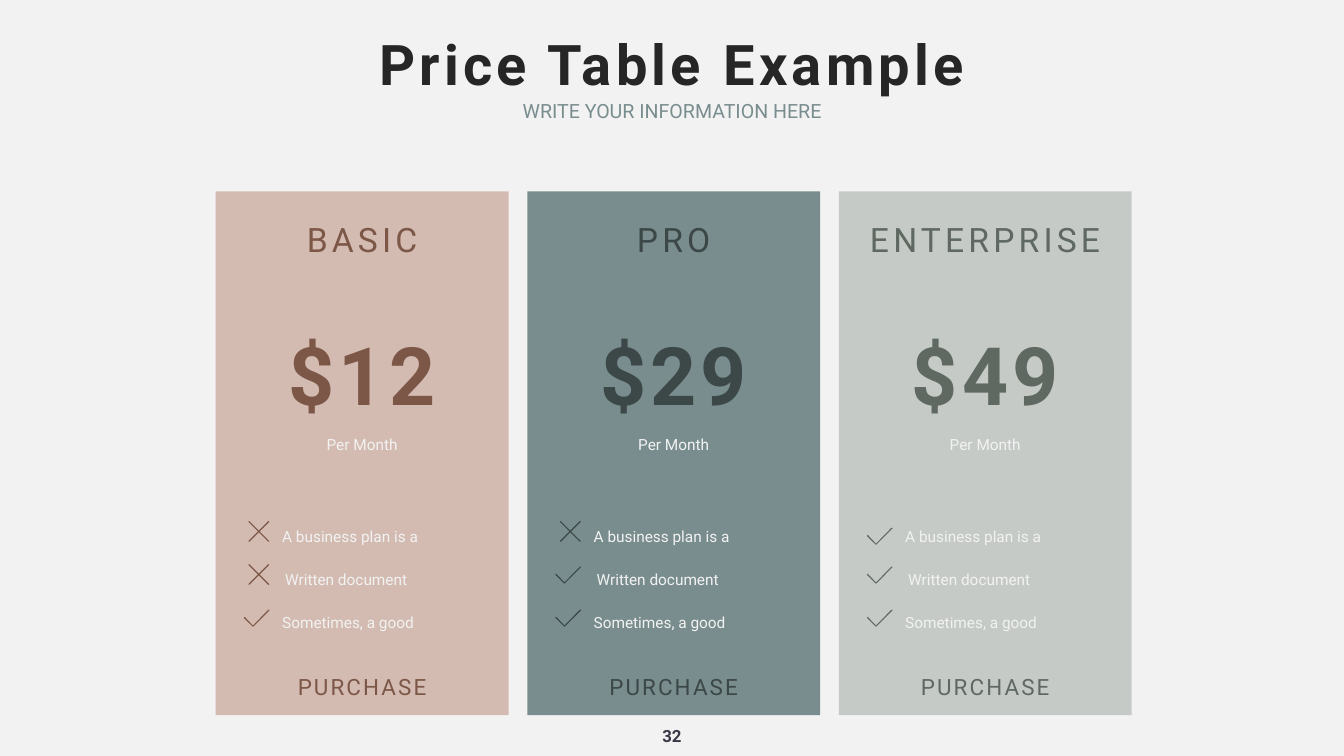
"""Build a price table slide with three plan cards."""
from dataclasses import dataclass

from pptx import Presentation
from pptx import util as u
from pptx.dml.color import RGBColor
from pptx.enum import shapes, text
from pptx.oxml.ns import qn

FONT = "Roboto"
PAPER = RGBColor(0xF2, 0xF2, 0xF2)
INK = RGBColor(0x26, 0x26, 0x26)
NAVY = RGBColor(0x3A, 0x38, 0x46)
TEAL = RGBColor(0x79, 0x8D, 0x8E)
BLUSH = RGBColor(0xD3, 0xBB, 0xB1)
SAGE = RGBColor(0xC5, 0xCA, 0xC6)
BROWN = RGBColor(0x7C, 0x56, 0x46)
SLATE = RGBColor(0x3C, 0x47, 0x47)
MOSS = RGBColor(0x5F, 0x68, 0x61)

CENTER = text.PP_ALIGN.CENTER
LEFT = text.PP_ALIGN.LEFT
TOP = text.MSO_ANCHOR.TOP
MIDDLE = text.MSO_ANCHOR.MIDDLE
BOTTOM = text.MSO_ANCHOR.BOTTOM

CARD_STEP = 23.18
ROW_TOP, ROW_STEP, ROW_HEIGHT = 62.18, 8.23, 5.58
FEATURES = [("A business plan is a", 21), ("Written document", 22), ("Sometimes, a good", 21)]
CROSS_ARM = [(50, 46), (95, 1), (98, 0), (100, 2), (99, 5)]
CHECK_OUTLINE = [(94, 2), (98, 0), (100, 4), (98, 6), (37, 98), (35, 100),
                 (33, 98), (0, 49), (0, 45), (2, 43), (4, 44), (35, 93)]


@dataclass
class Box:
    """A rectangle whose inner boxes are given in percent of its size."""
    left: float
    top: float
    width: float
    height: float

    def inner(self, left, top, width, height):
        """Return the inner box at the given percentages."""
        return Box(*self.point(left, top),
                   round(self.width * width / 100), round(self.height * height / 100))

    def point(self, across, down):
        """Return the position at the given percentages."""
        return (round(self.left + self.width * across / 100),
                round(self.top + self.height * down / 100))

    def bounds(self):
        """Return left, top, width and height."""
        return self.left, self.top, self.width, self.height


@dataclass
class Mark:
    """An outline in percent of its own box, placed within a feature row."""
    outline: list
    left: float
    drop: float
    width: float
    height: float


@dataclass
class Plan:
    """The content and colours of one card."""
    name: str
    price: str
    fill: RGBColor
    accent: RGBColor
    marks: list


def cross_outline():
    """Turn one arm through four quarters."""
    points, arm = [], CROSS_ARM
    for _ in range(4):
        points += arm
        arm = [(100 - y, x) for x, y in arm]
    return points


CROSS = Mark(cross_outline(), 11.19, 0.76, 7.06, 3.95)
CHECK = Mark(CHECK_OUTLINE, 9.64, 1.2, 8.78, 3.27)
LOW_CHECK = Mark(CHECK_OUTLINE, 9.64, 2.02, 8.78, 3.27)

PLANS = [
    Plan("BASIC", "$12", BLUSH, BROWN, [CROSS, CROSS, CHECK]),
    Plan("PRO", "$29", TEAL, SLATE, [CROSS, CHECK, CHECK]),
    Plan("ENTERPRISE", "$49", SAGE, MOSS, [LOW_CHECK, CHECK, CHECK]),
]


def write(shape, wording, size, color, bold=False, tracking=0,
          align=CENTER, anchor=MIDDLE, leading=None, after=0):
    """Fill a shape with one formatted paragraph."""
    frame = shape.text_frame
    frame.text = wording
    frame.word_wrap = True
    frame.auto_size = text.MSO_AUTO_SIZE.NONE
    frame.vertical_anchor = anchor
    paragraph = frame.paragraphs[0]
    paragraph.alignment = align
    paragraph.space_before = u.Pt(0)
    paragraph.space_after = u.Pt(after)
    if leading:
        paragraph.line_spacing = u.Pt(leading)
    font = paragraph.font
    font.name, font.size, font.bold = FONT, u.Pt(size), bold
    font.color.rgb = color
    if tracking:
        properties = paragraph._p.get_or_add_pPr().find(qn("a:defRPr"))
        properties.set("spc", str(tracking * 100))


def add_text(slide, box, wording, size, color, **style):
    """Add a text box with one paragraph."""
    write(slide.shapes.add_textbox(*box.bounds()), wording, size, color, **style)


def paint(shape, color):
    """Give a shape a flat fill."""
    shape.shadow.inherit = False
    shape.fill.solid()
    shape.fill.fore_color.rgb = color
    shape.line.fill.background()


def add_mark(slide, box, outline, color):
    """Draw a check or a cross in the box."""
    start, *others = [box.point(*point) for point in outline]
    builder = slide.shapes.build_freeform(*start)
    builder.add_line_segments(others, close=True)
    paint(builder.convert_to_shape(), color)


def add_header(slide, box):
    """Place the title and subtitle placeholders."""
    title, subtitle = slide.placeholders
    title.left, title.top, title.width, title.height = box.inner(0, 3.47, 100, 9.67).bounds()
    write(title, "Price Table Example", 80, INK, bold=True, tracking=6, anchor=BOTTOM)
    subtitle.left, subtitle.top, subtitle.width, subtitle.height = box.inner(
        0, 12.2, 100, 4.13).bounds()
    write(subtitle, "WRITE YOUR INFORMATION HERE", 28, TEAL,
          anchor=TOP, leading=40, after=12)


def add_card(slide, box, plan):
    """Place one plan card with its price, features and call to action."""
    paint(slide.shapes.add_shape(shapes.MSO_SHAPE.RECTANGLE, *box.bounds()), plan.fill)
    add_text(slide, box.inner(0, 4.62, 100, 8.76), plan.name, 48, plan.accent, tracking=6)
    add_text(slide, box.inner(0, 24.83, 100, 19.63), plan.price, 115, plan.accent,
             bold=True, tracking=6)
    add_text(slide, box.inner(0, 46.1, 100, 4.52), "Per Month", 22, PAPER)
    for row, ((feature, indent), mark) in enumerate(zip(FEATURES, plan.marks)):
        top = ROW_TOP + row * ROW_STEP
        add_text(slide, box.inner(indent, top, 67, ROW_HEIGHT), feature, 22, PAPER,
                 align=LEFT, anchor=TOP, leading=37)
        mark_box = box.inner(mark.left, top + mark.drop, mark.width, mark.height)
        add_mark(slide, mark_box, mark.outline, plan.accent)
    add_text(slide, box.inner(0, 91.53, 100, 6.16), "PURCHASE", 32, plan.accent, tracking=3)


def add_page_number(slide, box):
    """Place the page number at the foot of the slide."""
    add_text(slide, box.inner(48.5, 95.67, 3, 3.33), "32", 24, NAVY, bold=True)


def main():
    """Build and save the presentation."""
    presentation = Presentation()
    presentation.slide_width = u.Inches(26.66)
    presentation.slide_height = u.Inches(15)
    slide = presentation.slides.add_slide(presentation.slide_layouts[0])
    slide.background.fill.solid()
    slide.background.fill.fore_color.rgb = PAPER
    page = Box(0, 0, presentation.slide_width, presentation.slide_height)
    add_header(slide, page)
    for column, plan in enumerate(PLANS):
        add_card(slide, page.inner(16.05 + column * CARD_STEP, 25.33, 21.79, 69.27), plan)
    add_page_number(slide, page)
    presentation.save("out.pptx")


if __name__ == "__main__":
    main()
